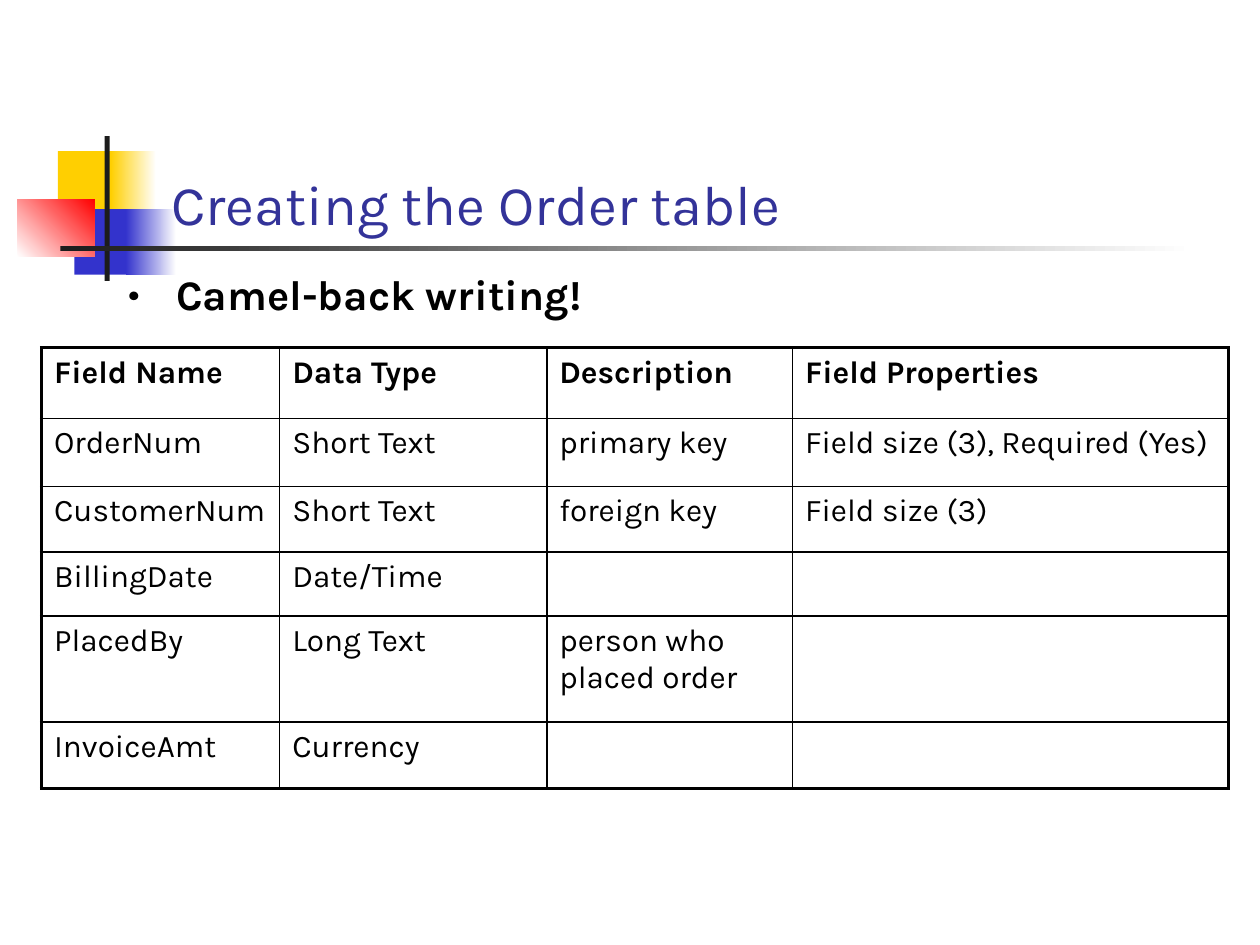
"""Build the slide "Creating the Order table" with its field definition table."""
from lxml.etree import SubElement
from pptx import Presentation
from pptx.dml.color import RGBColor
from pptx.enum.shapes import MSO_SHAPE
from pptx.enum.text import MSO_ANCHOR, PP_ALIGN
from pptx.oxml import parse_xml
from pptx.oxml.ns import nsdecls, qn
from pptx.util import Inches, Pt


def color(value):
    return RGBColor.from_string(value)


def add_run(paragraph, text, size, value="000000", bold=False):
    run = paragraph.add_run()
    run.text = text
    run.font.name = "Karla"
    run.font.size = Pt(size)
    run.font.bold = bold
    run.font.color.rgb = color(value)


presentation = Presentation()
presentation.slide_width = Inches(10)
presentation.slide_height = Inches(7.5)
slide = presentation.slides.add_slide(presentation.slide_layouts[5])

decorations = [
    (0.46, 1.2, 0.48, 0.52, ["FFCF01"], 0),
    (0.88, 1.2, 0.36, 0.52, ["FFCF01", "FFFFFF"], 0),
    (0.59, 1.66, 0.46, 0.52, ["3333CC"], 0),
    (1, 1.66, 0.4, 0.52, ["3333CC", "FFFFFF"], 0),
    (0.14, 1.58, 0.61, 0.46, ["FFFFFF", "FF0000"], 45),
    (0.83, 1.08, 0.04, 1.15, ["1C1C1C"], 0),
    (0.48, 1.95, 9, 0.04, ["1C1C1C", "FFFFFF"], 0),
]
for left, top, width, height, colors, angle in decorations:
    shape = slide.shapes.add_shape(
        MSO_SHAPE.RECTANGLE, Inches(left), Inches(top), Inches(width), Inches(height)
    )
    shape.shadow.inherit = False
    shape.line.fill.background()
    if len(colors) == 1:
        shape.fill.solid()
        shape.fill.fore_color.rgb = color(colors[0])
    else:
        shape.fill.gradient()
        shape.fill.gradient_angle = angle
        for position, stop in enumerate(shape.fill.gradient_stops):
            stop.color.rgb = color(colors[position])
            stop.position = position

title = slide.shapes.title
title.left, title.top = Inches(1.26), Inches(0.68)
title.width, title.height = Inches(8.52), Inches(1.25)
title.text_frame.vertical_anchor = MSO_ANCHOR.BOTTOM
title.text_frame.word_wrap = True
paragraph = title.text_frame.paragraphs[0]
paragraph.alignment = PP_ALIGN.LEFT
add_run(paragraph, "Creating the Order table", 32, "333399")
slide.shapes._spTree.append(title._element)

rows = [
    ("Field Name", "Data Type", "Description", "Field Properties"),
    ("OrderNum", "Short Text", "primary key", "Field size (3), Required (Yes)"),
    ("CustomerNum", "Short Text", "foreign key", "Field size (3)"),
    ("BillingDate", "Date/Time", "", ""),
    ("PlacedBy", "Long Text", "person who placed order", ""),
    ("InvoiceAmt", "Currency", "", ""),
]
column_widths = [1.89, 2.12, 1.95, 3.46]
row_heights = [0.56, 0.54, 0.52, 0.51, 0.84, 0.53]
last_row, last_column = len(rows) - 1, len(column_widths) - 1

table = slide.shapes.add_table(
    len(rows), len(column_widths), Inches(0.33), Inches(2.76),
    Inches(sum(column_widths)), Inches(sum(row_heights)),
).table
table.first_row = False
table.horz_banding = False
for column, width in zip(table.columns, column_widths):
    column.width = Inches(width)
for row, height in zip(table.rows, row_heights):
    row.height = Inches(height)

for row_index, texts in enumerate(rows):
    for column_index, text in enumerate(texts):
        cell = table.cell(row_index, column_index)
        cell.fill.background()
        if text:
            add_run(cell.text_frame.paragraphs[0], text, 18, bold=row_index == 0)
        outer_edges = {
            "L": column_index == 0,
            "R": column_index == last_column,
            "T": row_index == 0,
            "B": row_index == last_row,
        }
        for position, (side, outer) in enumerate(outer_edges.items()):
            border = parse_xml(
                f'<a:ln{side} {nsdecls("a")} w="{Pt(2.25 if outer else 1)}">'
                '<a:solidFill><a:srgbClr val="000000"/></a:solidFill>'
                f"</a:ln{side}>"
            )
            cell._tc.get_or_add_tcPr().insert(position, border)

note = slide.shapes.add_textbox(Inches(0.92), Inches(2.08), Inches(8.25), Inches(0.5))
note.text_frame.word_wrap = True
paragraph = note.text_frame.paragraphs[0]
properties = paragraph._p.get_or_add_pPr()
properties.set("marL", str(Inches(0.38)))
properties.set("indent", str(Inches(-0.38)))
SubElement(properties, qn("a:buFont")).set("typeface", "Karla")
SubElement(properties, qn("a:buChar")).set("char", "•")
add_run(paragraph, "Camel-back writing!", 24, bold=True)

presentation.save("out.pptx")
